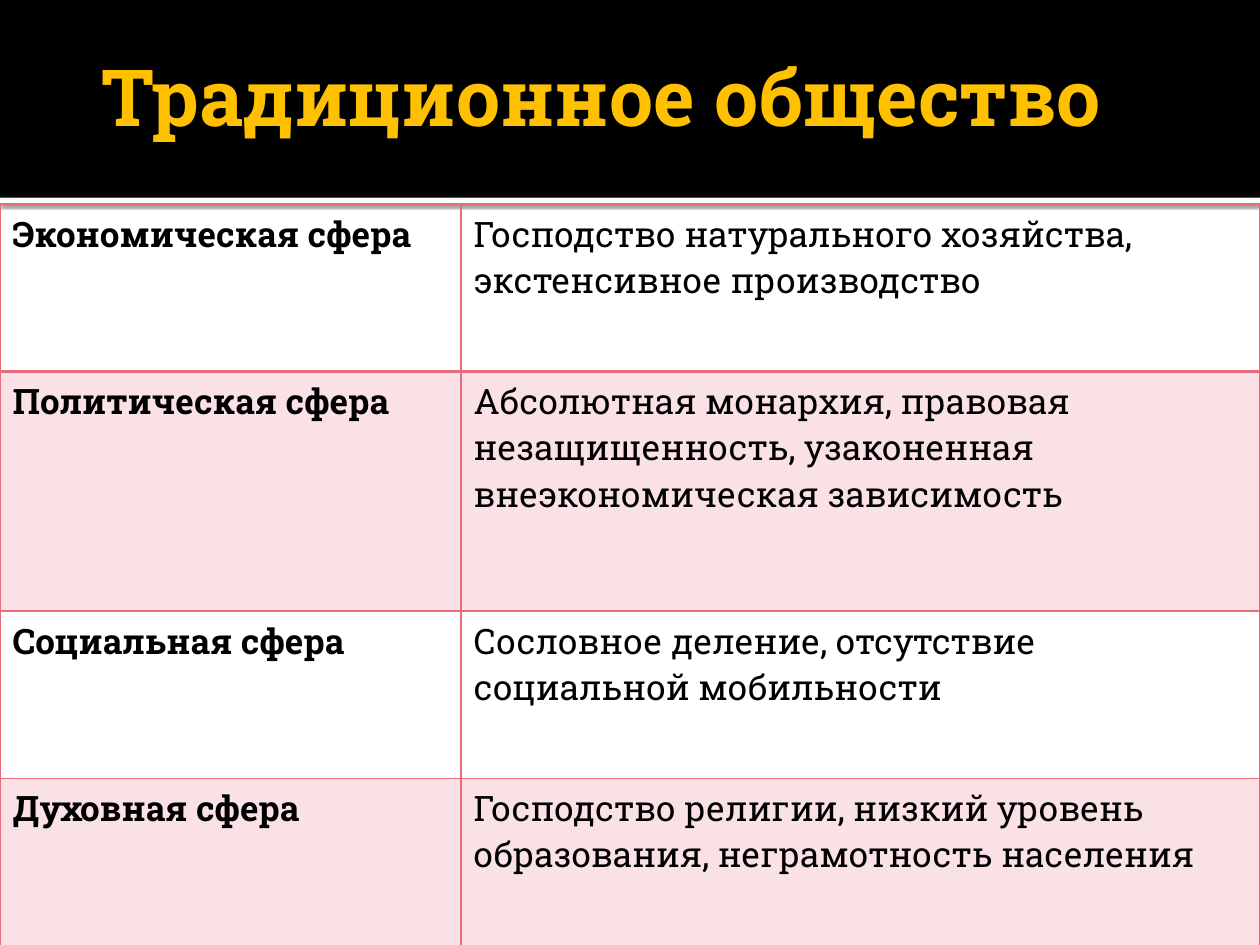
import pptx
import pptx.dml.color
import pptx.enum.shapes
import pptx.enum.text
import pptx.oxml
import pptx.oxml.ns
import pptx.util

Inches = pptx.util.Inches
Pt = pptx.util.Pt
RGBColor = pptx.dml.color.RGBColor

# Content
TITLE = "Традиционное общество"
SPHERES = [
    ("Экономическая сфера",
     "Господство натурального хозяйства, экстенсивное производство"),
    ("Политическая сфера",
     "Абсолютная монархия, правовая незащищенность, узаконенная внеэкономическая зависимость"),
    ("Социальная сфера",
     "Сословное деление, отсутствие социальной мобильности"),
    ("Духовная сфера",
     "Господство религии, низкий уровень образования, неграмотность населения"),
]

# Style
FONT = "Roboto Slab"
BLACK = RGBColor(0x00, 0x00, 0x00)
WHITE = RGBColor(0xFF, 0xFF, 0xFF)
GOLD = RGBColor(0xFF, 0xC0, 0x00)
ROSE = RGBColor(0xE6, 0x6C, 0x7D)
BAND_OPACITY = 20

# Layout in inches
SLIDE_WIDTH, SLIDE_HEIGHT = 10, 7.5
HEADER_HEIGHT, STRIP_HEIGHT = 1.57, 0.05
TABLE_TOP = HEADER_HEIGHT + STRIP_HEIGHT
COLUMN_WIDTHS = [3.66, 6.34]
ROW_HEIGHTS = [1.33, 1.9, 1.33, 1.33]
NAMESPACE = pptx.oxml.ns.nsdecls("a")


def add_bar(slide, top, height, color):
    bar = slide.shapes.add_shape(
        pptx.enum.shapes.MSO_SHAPE.RECTANGLE,
        0, Inches(top), Inches(SLIDE_WIDTH), Inches(height))
    bar.shadow.inherit = False
    bar.fill.solid()
    bar.fill.fore_color.rgb = color
    bar.line.fill.background()
    return bar


def add_shadow(shape):
    effects = shape.element.spPr.find(pptx.oxml.ns.qn("a:effectLst"))
    effects.append(pptx.oxml.parse_xml(
        f'<a:outerShdw {NAMESPACE} blurRad="{Pt(2.5)}" dist="{Pt(0.8)}" dir="5400000">'
        f'<a:srgbClr val="{BLACK}"><a:alpha val="60000"/></a:srgbClr></a:outerShdw>'))


def format_run(run, size, color, bold):
    run.font.name = FONT
    run.font.size = Pt(size)
    run.font.color.rgb = color
    run.font.bold = bold


def set_borders(cell, widths):
    properties = cell._tc.get_or_add_tcPr()
    for index, (side, width) in enumerate(widths.items()):
        properties.insert(index, pptx.oxml.parse_xml(
            f'<a:ln{side} {NAMESPACE} w="{Pt(width)}"><a:solidFill>'
            f'<a:srgbClr val="{ROSE}"/></a:solidFill></a:ln{side}>'))


def fill_cell(cell, banded):
    if not banded:
        cell.fill.background()
        return
    cell.fill.solid()
    cell.fill.fore_color.rgb = ROSE
    color = cell._tc.tcPr.find(".//" + pptx.oxml.ns.qn("a:srgbClr"))
    color.append(pptx.oxml.parse_xml(
        f'<a:alpha {NAMESPACE} val="{BAND_OPACITY * 1000}"/>'))


def add_title(slide):
    title = slide.shapes.title
    title.left, title.top = Inches(0.25), Inches(0.13)
    title.width, title.height = Inches(9), Inches(1.25)
    frame = title.text_frame
    frame.text = TITLE
    frame.word_wrap = True
    frame.vertical_anchor = pptx.enum.text.MSO_ANCHOR.MIDDLE
    frame.margin_left = Inches(0.1)
    frame.margin_top = frame.margin_right = frame.margin_bottom = Inches(0.05)
    paragraph = frame.paragraphs[0]
    paragraph.alignment = pptx.enum.text.PP_ALIGN.CENTER
    format_run(paragraph.runs[0], 45, GOLD, True)
    # Bring the title in front of the header bars
    title.element.getparent().append(title.element)


def add_spheres_table(slide):
    table = slide.shapes.add_table(
        len(SPHERES), len(COLUMN_WIDTHS), 0, Inches(TABLE_TOP),
        Inches(SLIDE_WIDTH), Inches(sum(ROW_HEIGHTS))).table
    table.first_row = table.horz_banding = False
    for column, width in zip(table.columns, COLUMN_WIDTHS):
        column.width = Inches(width)
    for row, height in zip(table.rows, ROW_HEIGHTS):
        row.height = Inches(height)
    for row_index, texts in enumerate(SPHERES):
        for column_index, text in enumerate(texts):
            cell = table.cell(row_index, column_index)
            cell.text = text
            format_run(cell.text_frame.paragraphs[0].runs[0], 20, BLACK,
                       column_index == 0)
            fill_cell(cell, row_index % 2 == 1)
            # The line under the first row is heavier
            set_borders(cell, {"L": 1, "R": 1,
                               "T": 2 if row_index == 1 else 1,
                               "B": 2 if row_index == 0 else 1})


def main():
    presentation = pptx.Presentation()
    presentation.slide_width = Inches(SLIDE_WIDTH)
    presentation.slide_height = Inches(SLIDE_HEIGHT)
    slide = presentation.slides.add_slide(presentation.slide_layouts[5])
    slide.background.fill.solid()
    slide.background.fill.fore_color.rgb = WHITE

    # Header
    add_shadow(add_bar(slide, HEADER_HEIGHT, STRIP_HEIGHT, WHITE))
    add_bar(slide, 0, HEADER_HEIGHT, BLACK)
    add_title(slide)

    # Table
    add_spheres_table(slide)
    presentation.save("out.pptx")


if __name__ == "__main__":
    main()
